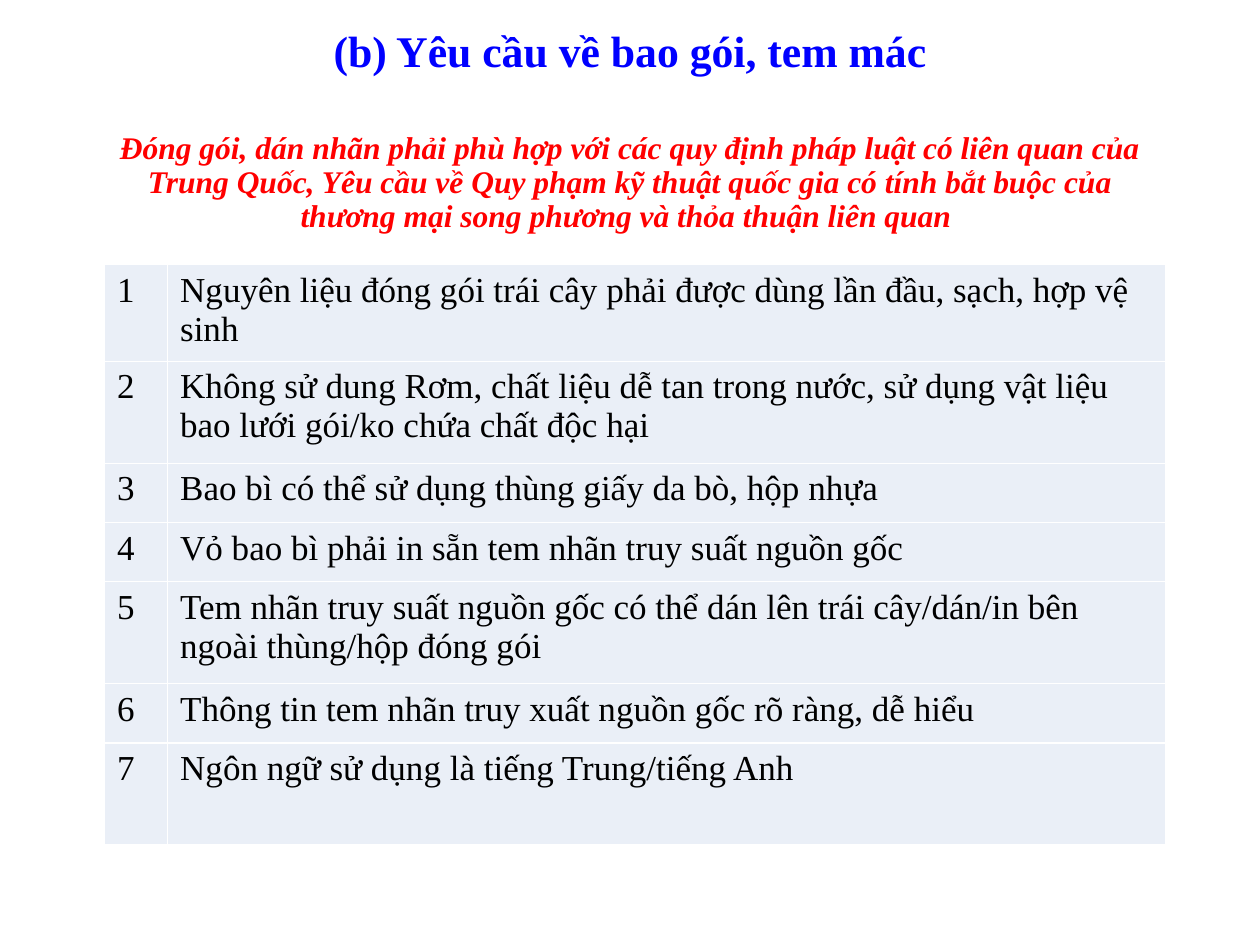
from lxml.etree import SubElement
from pptx import Presentation
from pptx.dml.color import RGBColor
from pptx.enum.text import MSO_ANCHOR, PP_ALIGN
from pptx.oxml.ns import qn
from pptx.util import Inches, Pt

FONT = "Times New Roman"
BLUE = RGBColor(0x00, 0x00, 0xFF)
RED = RGBColor(0xFF, 0x00, 0x00)
BLACK = RGBColor(0x00, 0x00, 0x00)
WHITE = RGBColor(0xFF, 0xFF, 0xFF)
PALE_BLUE = RGBColor(0xEA, 0xEF, 0xF7)

TITLE_BOX = (0, 0, 10, 0.85)
INTRODUCTION_BOX = (0.75, 1, 8.5, 5.58)
TABLE_BOX = (0.83, 2.1, 8.42, 4.63)
NUMBER_WIDTH = 0.5
SHORT_ROW, TALL_ROW = 0.47, 0.81

TITLE = "(b) Yêu cầu về bao gói, tem mác"
INTRODUCTION = (
    "Đóng gói, dán nhãn phải phù hợp với các quy định pháp luật có liên quan của "
    "Trung Quốc, Yêu cầu về Quy phạm kỹ thuật quốc gia có tính bắt buộc của "
    "thương mại song phương và thỏa thuận liên quan "
)
REQUIREMENTS = [
    ("Nguyên liệu đóng gói trái cây phải được dùng lần đầu, sạch, hợp vệ sinh", SHORT_ROW),
    ("Không sử dung Rơm, chất liệu dễ tan trong nước, sử dụng vật liệu "
     "bao lưới gói/ko chứa chất độc hại", TALL_ROW),
    ("Bao bì có thể sử dụng thùng giấy da bò, hộp nhựa", SHORT_ROW),
    ("Vỏ bao bì phải in sẵn tem nhãn truy suất nguồn gốc", SHORT_ROW),
    ("Tem nhãn truy suất nguồn gốc có thể dán lên trái cây/dán/in bên "
     "ngoài thùng/hộp đóng gói", TALL_ROW),
    ("Thông tin tem nhãn truy xuất nguồn gốc rõ ràng, dễ hiểu", SHORT_ROW),
    ("Ngôn ngữ sử dụng là tiếng Trung/tiếng Anh", TALL_ROW),
]


def add_run(paragraph, text, size, color, bold=False, italic=False):
    run = paragraph.add_run()
    run.text = text
    run.font.name = FONT
    run.font.size = Pt(size)
    run.font.color.rgb = color
    run.font.bold = bold
    run.font.italic = italic


def center(paragraph):
    paragraph.alignment = PP_ALIGN.CENTER
    paragraph.line_spacing = 0.9
    paragraph.space_before = Pt(0)


def place_title(slide, box):
    title = slide.shapes.title
    title.left, title.top, title.width, title.height = map(Inches, box)
    title.text_frame.vertical_anchor = MSO_ANCHOR.MIDDLE
    paragraph = title.text_frame.paragraphs[0]
    center(paragraph)
    add_run(paragraph, TITLE, 25, BLUE, bold=True)


def add_introduction(slide, box):
    frame = slide.shapes.add_textbox(*map(Inches, box)).text_frame
    frame.word_wrap = True
    paragraph = frame.paragraphs[0]
    center(paragraph)
    add_run(paragraph, INTRODUCTION, 18, RED, bold=True, italic=True)


def format_cell(cell, text):
    """Fill a cell with text, white borders and a pale background."""
    add_run(cell.text_frame.paragraphs[0], text, 20, BLACK)
    properties = cell._tc.get_or_add_tcPr()
    for side in ("lnL", "lnR", "lnT", "lnB"):
        line = SubElement(properties, qn(f"a:{side}"), w=str(Pt(1)))
        fill = SubElement(line, qn("a:solidFill"))
        SubElement(fill, qn("a:srgbClr"), val=str(WHITE))
    cell.fill.solid()
    cell.fill.fore_color.rgb = PALE_BLUE


def add_requirements(slide, box):
    table = slide.shapes.add_table(len(REQUIREMENTS), 2, *map(Inches, box)).table
    table.first_row = False
    table.horz_banding = False
    table.columns[0].width = Inches(NUMBER_WIDTH)
    table.columns[1].width = Inches(box[2] - NUMBER_WIDTH)
    for index, (text, height) in enumerate(REQUIREMENTS):
        table.rows[index].height = Inches(height)
        format_cell(table.cell(index, 0), str(index + 1))
        format_cell(table.cell(index, 1), text)


def main():
    presentation = Presentation()
    presentation.slide_width = Inches(10)
    presentation.slide_height = Inches(7.5)
    slide = presentation.slides.add_slide(presentation.slide_layouts[5])
    place_title(slide, TITLE_BOX)
    add_introduction(slide, INTRODUCTION_BOX)
    add_requirements(slide, TABLE_BOX)
    presentation.save("out.pptx")


if __name__ == "__main__":
    main()
